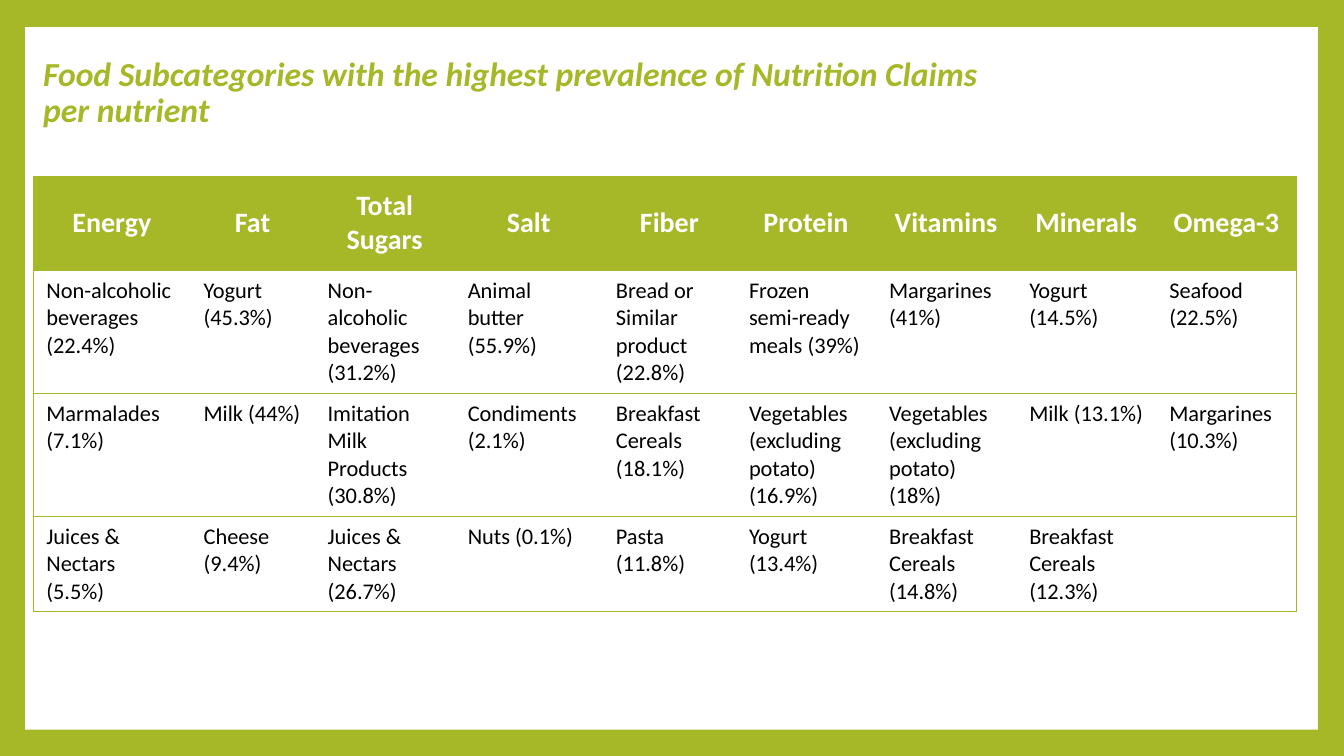
import pptx
import pptx.util
import pptx.dml.color
import pptx.enum.shapes
import pptx.enum.text
import pptx.oxml
import pptx.oxml.ns
from pptx.util import Inches

TITLE = "Food Subcategories with the highest prevalence of Nutrition Claims\nper nutrient"
HEADERS = ["Energy", "Fat", "Total Sugars", "Salt", "Fiber", "Protein",
           "Vitamins", "Minerals", "Omega-3"]
FOODS = [
    ["Non-alcoholic beverages (22.4%)", "Yogurt (45.3%)",
     "Non-alcoholic beverages (31.2%)", "Animal butter (55.9%)",
     "Bread or Similar product (22.8%)", "Frozen semi-ready meals (39%)",
     "Margarines (41%)", "Yogurt (14.5%)", "Seafood (22.5%)"],
    ["Marmalades (7.1%)", "Milk (44%)", "Imitation Milk Products (30.8%)",
     "Condiments (2.1%)", "Breakfast Cereals (18.1%)",
     "Vegetables (excluding potato) (16.9%)",
     "Vegetables (excluding potato) (18%)", "Milk (13.1%)", "Margarines (10.3%)"],
    ["Juices & Nectars (5.5%)", "Cheese (9.4%)", "Juices & Nectars (26.7%)",
     "Nuts (0.1%)", "Pasta (11.8%)", "Yogurt (13.4%)",
     "Breakfast Cereals (14.8%)", "Breakfast Cereals (12.3%)", ""],
]
COLUMN_WIDTHS = [1.56, 1.23, 1.39, 1.47, 1.32, 1.39, 1.39, 1.39, 1.39]
ROW_HEIGHTS = [0.93, 1.22, 1.22, 0.95]
COLORS = {"green": "A6B727", "white": "FFFFFF", "black": "000000"}
FONT = "Calibri"
NO_STYLE = "{2D5ABB26-0587-4C30-8999-92F81FD0307C}"
BORDER_WIDTH = pptx.util.Pt(0.79)


def rgb(name):
    return pptx.dml.color.RGBColor.from_string(COLORS[name])


def format_runs(paragraph, size, color, bold=False, italic=False):
    for run in paragraph.runs:
        run.font.name = FONT
        run.font.size = pptx.util.Pt(size)
        run.font.color.rgb = rgb(color)
        run.font.bold = bold
        run.font.italic = italic


def add_borders(cell, sides):
    """Draw green lines on the given sides, a subset of "LRTB" in that order."""
    properties = cell._tc.get_or_add_tcPr()
    for side in sides:
        properties.append(pptx.oxml.parse_xml(
            f'<a:ln{side} {pptx.oxml.ns.nsdecls("a")} w="{BORDER_WIDTH}"><a:solidFill>'
            f'<a:srgbClr val="{COLORS["green"]}"/></a:solidFill></a:ln{side}>'))


def add_panel(slide):
    panel = slide.shapes.add_shape(
        pptx.enum.shapes.MSO_SHAPE.RECTANGLE,
        Inches(0.25), Inches(0.27), Inches(12.82), Inches(6.97))
    panel.shadow.inherit = False
    panel.fill.solid()
    panel.fill.fore_color.rgb = rgb("white")
    panel.line.fill.background()


def add_title(slide):
    title = slide.shapes.add_textbox(
        Inches(0.33), Inches(0.19), Inches(10.8), Inches(1.48))
    frame = title.text_frame
    frame.word_wrap = True
    frame.vertical_anchor = pptx.enum.text.MSO_ANCHOR.MIDDLE
    paragraph = frame.paragraphs[0]
    paragraph.text = TITLE
    paragraph.line_spacing = 0.9
    format_runs(paragraph, 24, "green", bold=True, italic=True)


def fill_cell(cell, text, is_header, sides):
    cell.margin_left = cell.margin_right = Inches(0.13)
    cell.margin_top = cell.margin_bottom = Inches(0.07)
    add_borders(cell, sides)
    cell.fill.solid()
    cell.fill.fore_color.rgb = rgb("green" if is_header else "white")
    paragraph = cell.text_frame.paragraphs[0]
    paragraph.text = text
    if is_header:
        cell.vertical_anchor = pptx.enum.text.MSO_ANCHOR.MIDDLE
        paragraph.alignment = pptx.enum.text.PP_ALIGN.CENTER
        format_runs(paragraph, 20, "white", bold=True)
    else:
        format_runs(paragraph, 16, "black")


def add_claims_table(slide):
    rows = [HEADERS] + FOODS
    table = slide.shapes.add_table(
        len(rows), len(HEADERS), Inches(0.33), Inches(1.75),
        Inches(sum(COLUMN_WIDTHS)), Inches(sum(ROW_HEIGHTS))).table
    table._tbl.tblPr.find(pptx.oxml.ns.qn("a:tableStyleId")).text = NO_STYLE
    table.horz_banding = False
    for column, width in zip(table.columns, COLUMN_WIDTHS):
        column.width = Inches(width)
    for row, height in zip(table.rows, ROW_HEIGHTS):
        row.height = Inches(height)
    last = len(HEADERS) - 1
    for row_index, texts in enumerate(rows):
        for column_index, text in enumerate(texts):
            sides = {0: "LTB", last: "RTB"}.get(column_index, "TB")
            fill_cell(table.cell(row_index, column_index), text, row_index == 0, sides)


def main():
    presentation = pptx.Presentation()
    presentation.slide_width = Inches(13.33)
    presentation.slide_height = Inches(7.5)
    slide = presentation.slides.add_slide(presentation.slide_layouts[6])
    slide.background.fill.solid()
    slide.background.fill.fore_color.rgb = rgb("green")
    add_panel(slide)
    add_title(slide)
    add_claims_table(slide)
    presentation.save("out.pptx")


if __name__ == "__main__":
    main()
